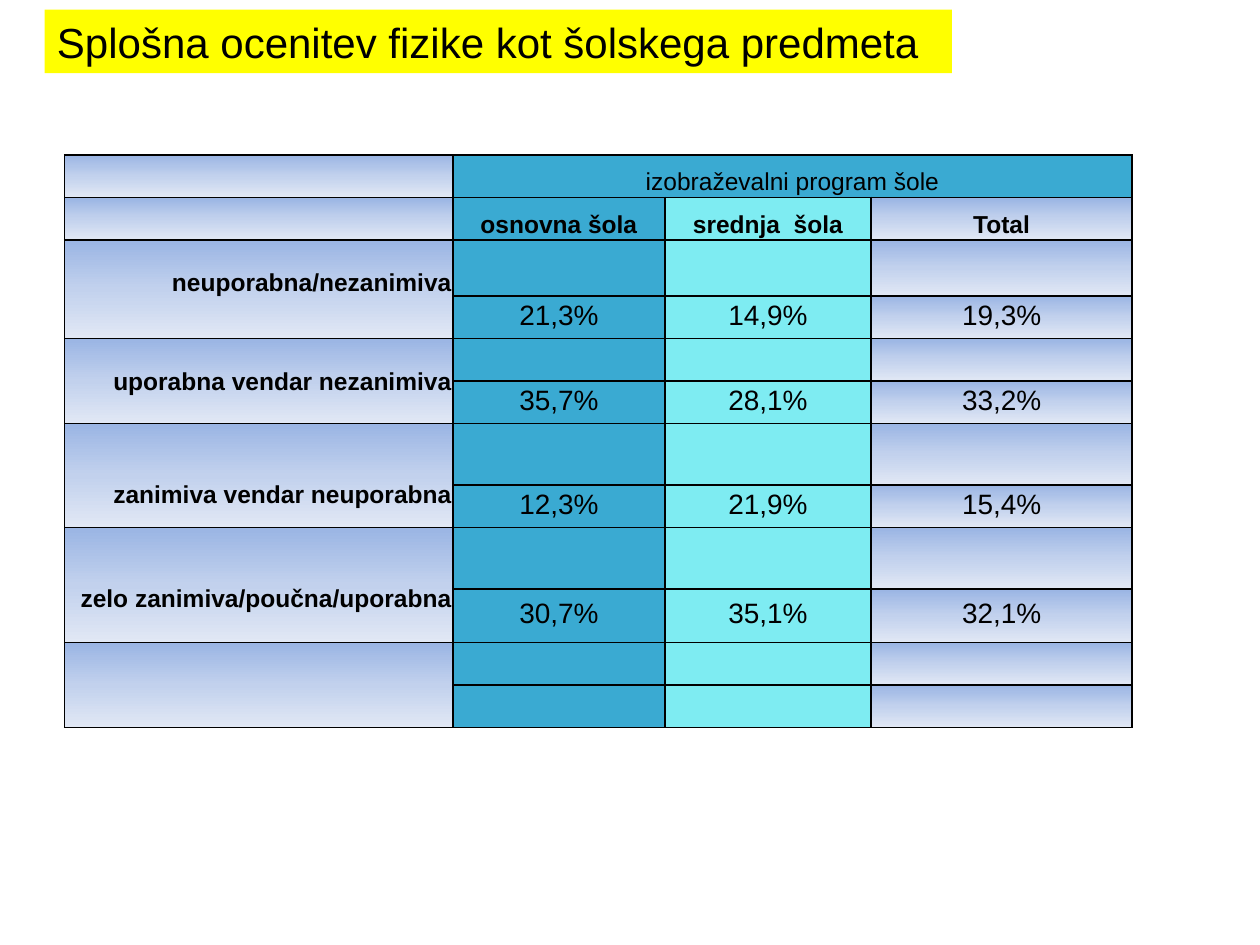
from dataclasses import dataclass

from pptx import Presentation
from pptx.dml.color import RGBColor as Color
from pptx.enum.shapes import MSO_SHAPE as Shape
from pptx.enum.text import MSO_ANCHOR as Anchor, PP_ALIGN as Align
from pptx.oxml import parse_xml
from pptx.oxml.ns import nsdecls
from pptx.util import Pt


@dataclass(frozen=True)
class Theme:
    font: str = "Arial"
    ink: str = "000000"
    highlight: str = "FFFF00"
    primary: str = "3AAAD2"
    secondary: str = "7EECF2"
    fade: tuple = ((0, "9AB5E4"), (50, "C2D1ED"), (100, "E1E8F5"))
    title_size: int = 24
    label_size: int = 14
    value_size: int = 16
    line_height: int = 16
    cell_margin: float = 0.72


def assign(target, values):
    for name, value in values.items():
        setattr(target, name, value)


class SlideBuilder:
    def __init__(self, slide, theme):
        self.slide = slide
        self.theme = theme

    def add_text(self, para, text, size, bold=False):
        span = para.add_run()
        span.text = text
        assign(span.font, {"name": self.theme.font, "size": Pt(size), "bold": bold})
        span.font.color.rgb = Color.from_string(self.theme.ink)

    def title(self, text, left, top, width, height):
        box = self.slide.shapes.add_shape(
            Shape.RECTANGLE, Pt(left), Pt(top), Pt(width), Pt(height))
        box.shadow.inherit = False
        box.fill.solid()
        box.fill.fore_color.rgb = Color.from_string(self.theme.highlight)
        box.line.fill.background()
        assign(box.text_frame, {"word_wrap": True, "vertical_anchor": Anchor.MIDDLE})
        para = box.text_frame.paragraphs[0]
        para.alignment = Align.LEFT
        self.add_text(para, text, self.theme.title_size)

    def table(self, left, top, widths, heights):
        frame = self.slide.shapes.add_table(
            len(heights), len(widths), Pt(left), Pt(top), Pt(sum(widths)), Pt(sum(heights)))
        table = frame.table
        assign(table, {"first_row": False, "horz_banding": False})
        for column, width in zip(table.columns, widths):
            column.width = Pt(width)
        for row, height in zip(table.rows, heights):
            row.height = Pt(height)
        fills = (None, self.theme.primary, self.theme.secondary, None)
        for row in table.rows:
            for cell, fill in zip(row.cells, fills):
                self.style_cell(cell, fill)
        return table

    def style_cell(self, cell, fill):
        margin = Pt(self.theme.cell_margin)
        sides = ("left", "right", "top", "bottom")
        assign(cell, {f"margin_{side}": margin for side in sides})
        cell.text_frame.paragraphs[0].line_spacing = Pt(self.theme.line_height)
        properties = cell._tc.get_or_add_tcPr()
        for side in "LRTB":
            properties.append(parse_xml(
                f'<a:ln{side} {nsdecls("a")} w="{Pt(1)}"><a:solidFill>'
                f'<a:srgbClr val="{self.theme.ink}"/></a:solidFill></a:ln{side}>'))
        if fill:
            cell.fill.solid()
            cell.fill.fore_color.rgb = Color.from_string(fill)
            return
        stops = "".join(
            f'<a:gs pos="{position * 1000}"><a:srgbClr val="{color}"/></a:gs>'
            for position, color in self.theme.fade)
        properties.append(parse_xml(
            f'<a:gradFill {nsdecls("a")} rotWithShape="1"><a:gsLst>{stops}</a:gsLst>'
            '<a:lin ang="5400000" scaled="0"/></a:gradFill>'))

    def cell_text(self, cell, text, size, align, anchor, bold=False, lines_above=0):
        assign(cell, {
            "vertical_anchor": anchor,
            "margin_top": Pt(self.theme.cell_margin + lines_above * self.theme.line_height),
        })
        para = cell.text_frame.paragraphs[0]
        para.alignment = align
        self.add_text(para, text, size, bold)


def main():
    theme = Theme()
    deck = Presentation()
    assign(deck, {"slide_width": Pt(720), "slide_height": Pt(540)})
    page = SlideBuilder(deck.slides.add_slide(deck.slide_layouts[6]), theme)

    page.title("Splošna ocenitev fizike kot šolskega predmeta", 25.5, 5.5, 518.5, 36.3)

    short = 24.3
    heights = [short, short, 32, short, short, short, 35.2, short, 35.2, 30.6, short, short]
    table = page.table(36.9, 88.5, [222, 121, 118, 149], heights)

    table.cell(0, 1).merge(table.cell(0, 3))
    page.cell_text(table.cell(0, 1), "izobraževalni program šole",
                   theme.label_size, Align.CENTER, Anchor.BOTTOM)
    for column, heading in enumerate(("osnovna šola", "srednja  šola", "Total"), 1):
        page.cell_text(table.cell(1, column), heading,
                       theme.label_size, Align.CENTER, Anchor.BOTTOM, bold=True)

    ratings = (
        ("neuporabna/nezanimiva", 1, ("21,3%", "14,9%", "19,3%")),
        ("uporabna vendar nezanimiva", 1, ("35,7%", "28,1%", "33,2%")),
        ("zanimiva vendar neuporabna", 2, ("12,3%", "21,9%", "15,4%")),
        ("zelo zanimiva/poučna/uporabna", 2, ("30,7%", "35,1%", "32,1%")),
    )
    for row in range(2, len(heights), 2):
        table.cell(row, 0).merge(table.cell(row + 1, 0))
    for index, (label, lines_above, shares) in enumerate(ratings):
        row = 2 + 2 * index
        page.cell_text(table.cell(row, 0), label, theme.label_size,
                       Align.RIGHT, Anchor.TOP, bold=True, lines_above=lines_above)
        for column, share in enumerate(shares, 1):
            page.cell_text(table.cell(row + 1, column), share,
                           theme.value_size, Align.CENTER, Anchor.MIDDLE)

    deck.save("out.pptx")


if __name__ == "__main__":
    main()
